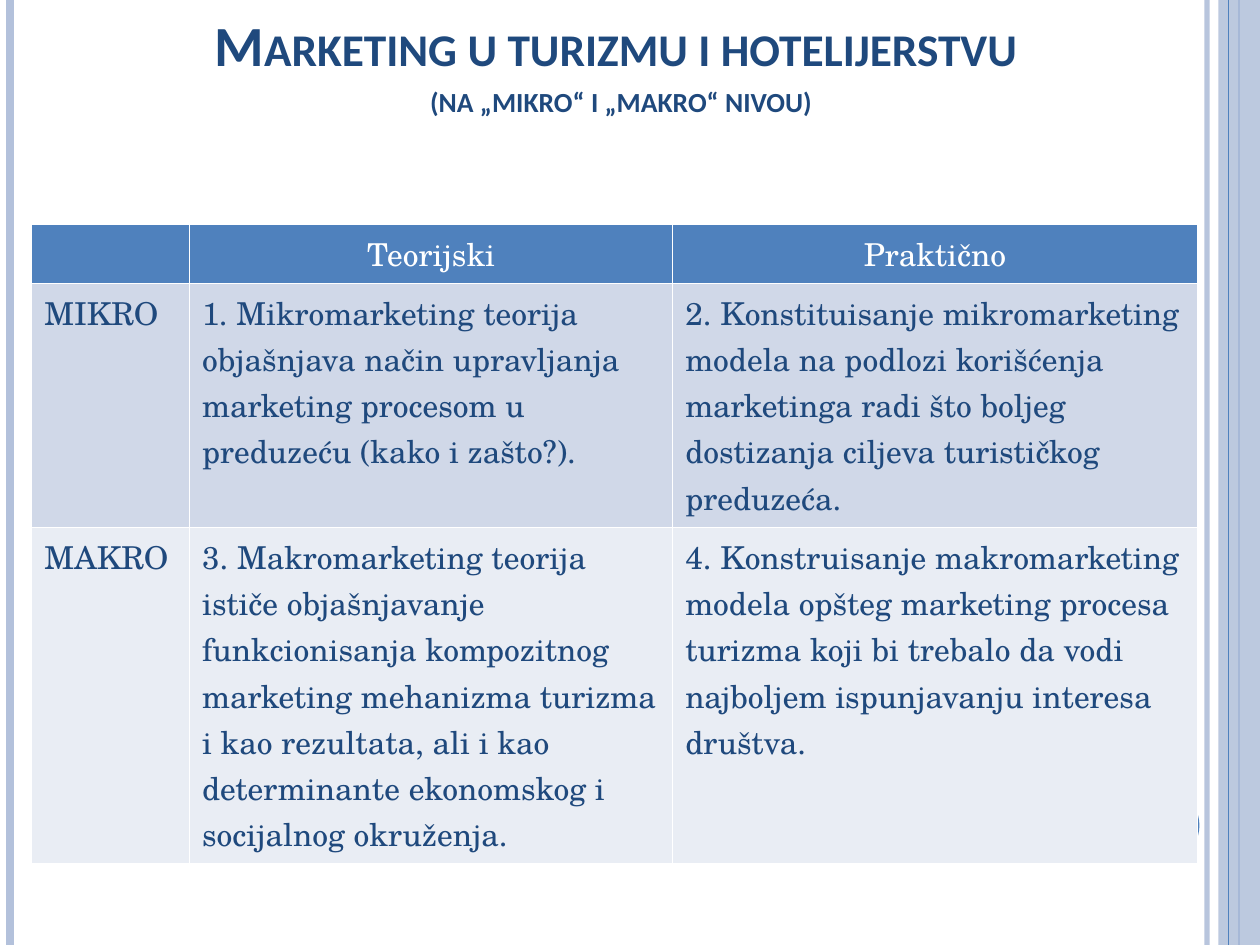
import dataclasses

import pptx
import pptx.dml.color
import pptx.enum.shapes
import pptx.enum.text
import pptx.oxml
import pptx.oxml.ns
import pptx.util

Cm = pptx.util.Cm
Align = pptx.enum.text.PP_ALIGN
Shape = pptx.enum.shapes.MSO_SHAPE


@dataclasses.dataclass(frozen=True)
class Theme:
    navy: str = "1F497D"
    blue: str = "4F81BD"
    pale: str = "B3C1DB"
    white: str = "FFFFFF"
    bands: tuple = ("D0D8E8", "E9EDF4")
    head: str = "Calibri"
    body: str = "TeX Gyre Schola"
    title: float = 32.4
    sub: float = 19.8
    cell: float = 18


def rgb(code):
    return pptx.dml.color.RGBColor.from_string(code)


def fade(fill, alpha):
    """Make a solid fill see-through; alpha is the opacity in percent."""
    tone = fill._xPr.find(".//" + pptx.oxml.ns.qn("a:srgbClr"))
    node = pptx.oxml.parse_xml(
        f'<a:alpha {pptx.oxml.ns.nsdecls("a")} val="{alpha * 1000}"/>')
    tone.append(node)


class Deck:
    def __init__(self, theme, wide, high):
        self.theme = theme
        self.file = pptx.Presentation()
        self.file.slide_width, self.file.slide_height = Cm(wide), Cm(high)
        self.high = high
        self.slide = self.file.slides.add_slide(self.file.slide_layouts[6])

    def paint(self, fill, color, alpha=100):
        fill.solid()
        fill.fore_color.rgb = rgb(color)
        if alpha < 100:
            fade(fill, alpha)

    def rule(self, x, color, width, alpha=100):
        """Draw a vertical line down the whole slide."""
        line = self.slide.shapes.add_connector(
            pptx.enum.shapes.MSO_CONNECTOR.STRAIGHT,
            Cm(x), Cm(0), Cm(x), Cm(self.high))
        line.line.width = pptx.util.Pt(width)
        self.paint(line.line.fill, color, alpha)
        line._element.spPr.append(pptx.oxml.parse_xml(
            f'<a:effectLst {pptx.oxml.ns.nsdecls("a")}/>'))

    def shape(self, kind, box, color, alpha=100):
        item = self.slide.shapes.add_shape(kind, *map(Cm, box))
        item.shadow.inherit = False
        item.line.fill.background()
        self.paint(item.fill, color, alpha)

    def label(self, para, text, color, form):
        """Add a run whose font takes the values in form."""
        run = para.add_run()
        run.text = text
        for name, value in form.items():
            setattr(run.font, name, value)
        run.font.color.rgb = rgb(color)
        return run

    def title(self, box, main, sub):
        frame = self.slide.shapes.add_textbox(*map(Cm, box)).text_frame
        frame.word_wrap = True
        frame.vertical_anchor = pptx.enum.text.MSO_ANCHOR.BOTTOM
        para = frame.paragraphs[0]
        para.alignment = Align.CENTER
        for text, size in ((main, self.theme.title), (sub, self.theme.sub)):
            look = {"name": self.theme.head, "bold": True,
                    "size": pptx.util.Pt(size)}
            run = self.label(para, text, self.theme.navy, look)
            run.font._element.set("cap", "small")
            if text == main:
                para.add_line_break()

    def table(self, spot, cols, rows, data):
        grid = self.slide.shapes.add_table(
            len(rows), len(cols), *map(Cm, (*spot, sum(cols), sum(rows)))).table
        for col, width in zip(grid.columns, cols):
            col.width = Cm(width)
        look = {"name": self.theme.body, "bold": False,
                "size": pptx.util.Pt(self.theme.cell)}
        fills = (self.theme.blue, *self.theme.bands)
        for r, (texts, fill) in enumerate(zip(data, fills)):
            grid.rows[r].height = Cm(rows[r])
            ink = self.theme.navy if r else self.theme.white
            for c, text in enumerate(texts):
                cell = grid.cell(r, c)
                self.paint(cell.fill, fill)
                para = cell.text_frame.paragraphs[0]
                para.alignment = Align.LEFT if r else Align.CENTER
                if text:
                    self.label(para, text, ink, look)


def main():
    theme = Theme()
    deck = Deck(theme, 25.4, 19.05)

    deck.rule(24.33, theme.pale, 3, 93)
    deck.rule(0.21, theme.pale, 4.5)
    deck.rule(24.98, theme.blue, 1.5)
    deck.shape(Shape.RECTANGLE, (24.56, 0, 0.84, 19.05), theme.pale, 87)
    deck.rule(24.77, theme.blue, 0.75)
    deck.shape(Shape.OVAL, (22.66, 15.88, 1.52, 1.52), theme.blue)

    deck.title((2.12, 0.42, 20.8, 2.12),
               "Marketing u turizmu i hotelijerstvu ",
               "(na „mikro“ i „makro“ nivou)")
    deck.table((0.64, 4.53), (3.18, 9.74, 10.58), (1.18, 4.92, 6.78), (
        ("", "Teorijski", "Praktično"),
        ("MIKRO",
         "1. Mikromarketing teorija objašnjava način upravljanja marketing "
         "procesom u preduzeću (kako i zašto?).",
         "2. Konstituisanje mikromarketing modela na podlozi korišćenja "
         "marketinga radi što boljeg dostizanja ciljeva turističkog "
         "preduzeća."),
        ("MAKRO",
         "3. Makromarketing teorija ističe objašnjavanje funkcionisanja "
         "kompozitnog marketing mehanizma turizma i kao rezultata, ali i kao "
         "determinante ekonomskog i socijalnog okruženja.",
         "4. Konstruisanje makromarketing modela opšteg marketing procesa "
         "turizma koji bi trebalo da vodi najboljem ispunjavanju interesa "
         "društva."),
    ))
    deck.file.save("out.pptx")


if __name__ == "__main__":
    main()
